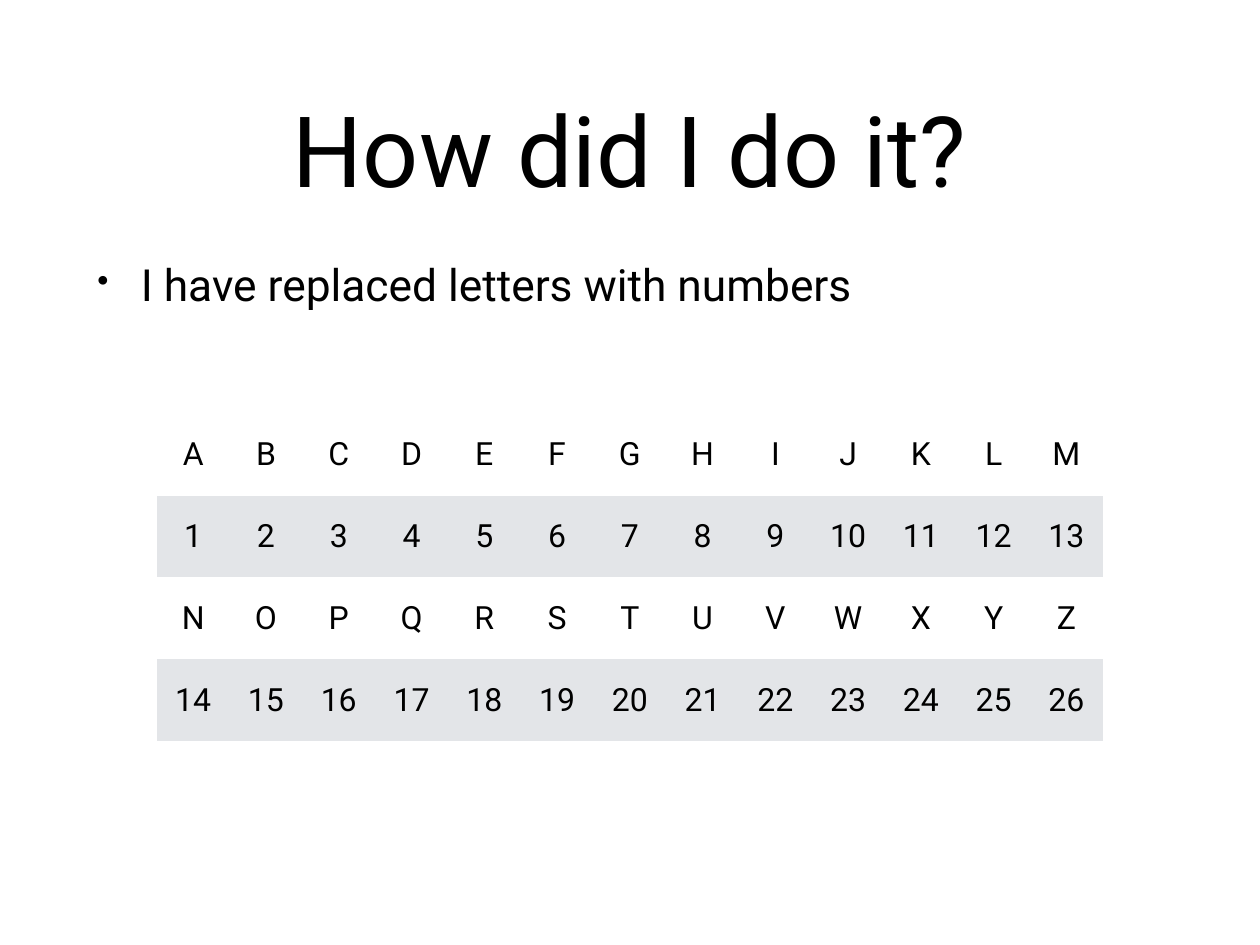
import pptx
import pptx.dml.color
import pptx.enum.text
import pptx.oxml.ns
import pptx.util
from lxml import etree

Inches = pptx.util.Inches
Pt = pptx.util.Pt
Align = pptx.enum.text.PP_ALIGN
Anchor = pptx.enum.text.MSO_ANCHOR
qn = pptx.oxml.ns.qn


def color(text):
    return pptx.dml.color.RGBColor.from_string(text)


class Deck:
    font = "Roboto"
    ink = "000000"
    bands = ("FFFFFF", "E3E5E8")
    plain = "{2D5ABB26-0587-4C30-8999-92F81FD0307C}"
    inset = Inches(0.06)

    def __init__(self, width, height):
        self.file = pptx.Presentation()
        self.file.slide_width = Inches(width)
        self.file.slide_height = Inches(height)
        self.slide = self.file.slides.add_slide(self.file.slide_layouts[5])

    def pad(self, item):
        item.margin_left = item.margin_right = self.inset
        item.margin_top = item.margin_bottom = self.inset

    def label(self, frame, text, size, align):
        frame.text = text
        para = frame.paragraphs[0]
        para.alignment = align
        para.font.name = self.font
        para.font.size = Pt(size)
        para.font.color.rgb = color(self.ink)
        return para

    def place(self, shape, box, anchor):
        shape.left, shape.top, shape.width, shape.height = map(Inches, box)
        frame = shape.text_frame
        frame.word_wrap = True
        frame.auto_size = pptx.enum.text.MSO_AUTO_SIZE.NONE
        frame.vertical_anchor = anchor
        self.pad(frame)
        return frame

    def title(self, text, box, size):
        frame = self.place(self.slide.shapes.title, box, Anchor.MIDDLE)
        self.label(frame, text, size, Align.CENTER)

    def bullet(self, text, box, size, indent):
        shape = self.slide.shapes.add_textbox(*map(Inches, box))
        frame = self.place(shape, box, Anchor.TOP)
        props = self.label(frame, text, size, Align.LEFT)._p.get_or_add_pPr()
        props.set("marL", str(Inches(indent)))
        props.set("indent", str(-Inches(indent)))
        mark = etree.Element(qn("a:buSzPct"), val="75000")
        props.insert(0, mark)
        mark.addnext(etree.Element(qn("a:buChar"), char="•"))

    def table(self, rows, box, size):
        shape = self.slide.shapes.add_table(
            len(rows), len(rows[0]), *map(Inches, box))
        grid = shape.table
        grid.first_row = grid.horz_banding = False
        grid._tbl.tblPr.find(qn("a:tableStyleId")).text = self.plain
        for r, row in enumerate(rows):
            for c, text in enumerate(row):
                cell = grid.cell(r, c)
                cell.fill.solid()
                cell.fill.fore_color.rgb = color(self.bands[r % 2])
                cell.vertical_anchor = Anchor.MIDDLE
                self.pad(cell)
                self.label(cell.text_frame, text, size, Align.CENTER)


def main():
    deck = Deck(14.22, 10.67)
    deck.title("How did I do it?", (1.04, 0.49, 12.14, 2.36), 80)
    deck.bullet("I have replaced letters with numbers",
                (1.04, 2.85, 12.14, 1.5), 36, 0.49)
    abc = "ABCDEFGHIJKLMNOPQRSTUVWXYZ"
    half = len(abc) // 2
    rows = []
    for start in (0, half):
        rows.append(abc[start:start + half])
        rows.append([str(start + n + 1) for n in range(half)])
    deck.table(rows, (1.77, 4.67, 10.68, 3.7), 26)
    deck.file.save("out.pptx")


if __name__ == "__main__":
    main()
